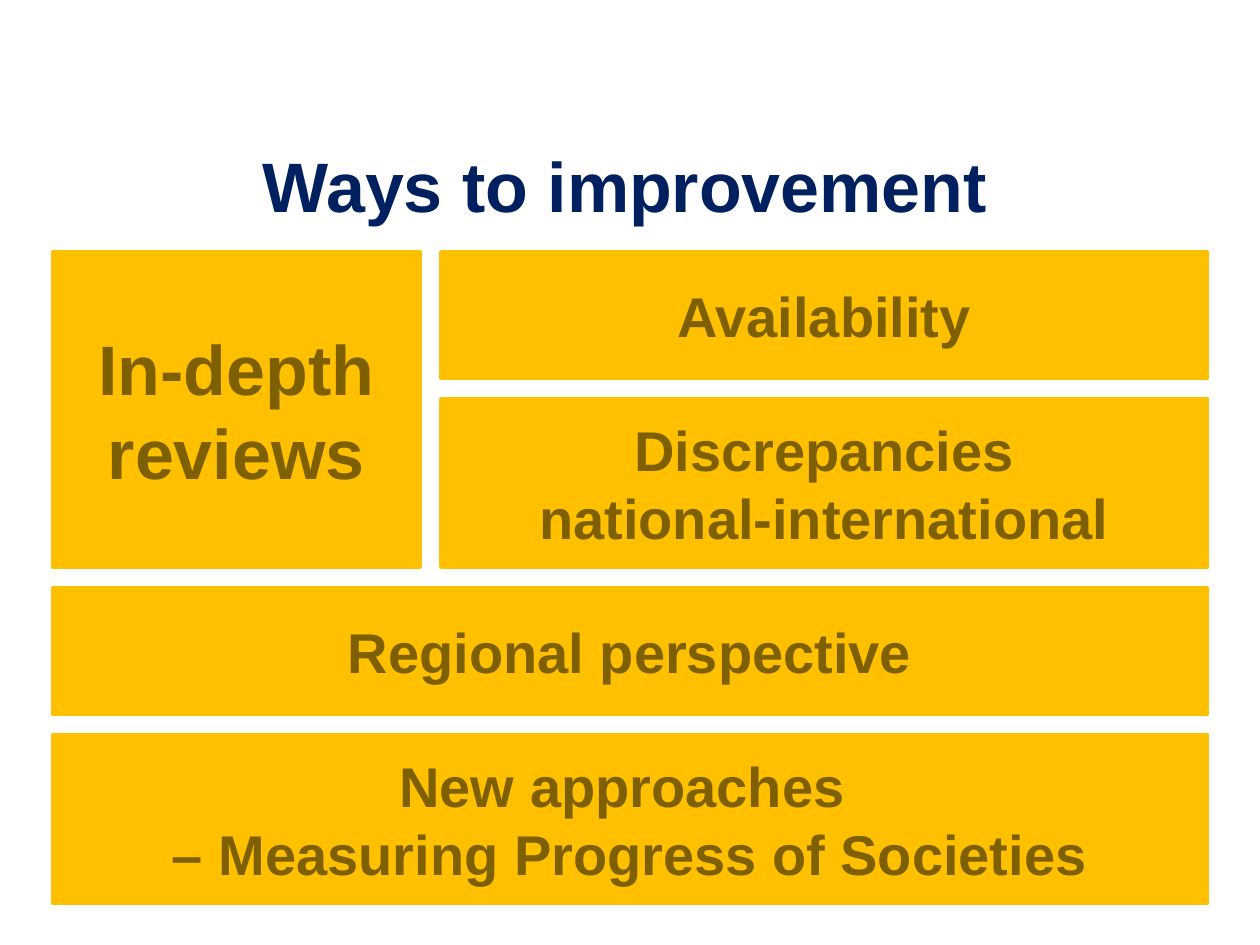
"""Build the slide "Ways to improvement" as a grid of five panels."""
from itertools import accumulate
from typing import NamedTuple

from pptx import Presentation
from pptx.dml.color import RGBColor
from pptx.enum.shapes import MSO_SHAPE as Shape
from pptx.enum.text import MSO_ANCHOR as Anchor, MSO_AUTO_SIZE as AutoSize, PP_ALIGN as Align
from pptx.util import Emu, Pt

PX = 914400 // 120
NAVY = RGBColor(0x00, 0x20, 0x60)
GOLD = RGBColor(0xFF, 0xC0, 0x00)
BROWN = RGBColor(0x7E, 0x60, 0x00)
FONT = "Arial"
LEFT, TOP, WIDTH, GAP = 50, 240, 1100, 20
SIDE_WIDTH = 350
ROW_HEIGHTS = (120, 160, 120, 160)


class Panel(NamedTuple):
    """A filled rectangle with a centred label, in px."""
    lines: tuple[str, ...]
    x: int
    y: int
    w: int
    h: int
    size: int = 32


def px(n: int) -> Emu:
    """Turn px into EMU."""
    return Emu(n * PX)


def place(sp, x: int, y: int, w: int, h: int) -> None:
    """Move and size a shape."""
    sp.left, sp.top, sp.width, sp.height = map(px, (x, y, w, h))


def write(tf, lines: tuple[str, ...], size: int, color: RGBColor) -> None:
    """Write centred bold lines as one paragraph."""
    tf.word_wrap = True
    tf.vertical_anchor = Anchor.MIDDLE
    p = tf.paragraphs[0]
    p.alignment = Align.CENTER
    for i, line in enumerate(lines):
        if i:
            p.add_line_break()
        r = p.add_run()
        r.text = line
        r.font.name, r.font.size, r.font.bold = FONT, Pt(size), True
        r.font.color.rgb = color


def draw_panel(s, panel: Panel) -> None:
    """Draw one panel."""
    sp = s.shapes.add_shape(Shape.RECTANGLE, *map(px, (panel.x, panel.y, panel.w, panel.h)))
    sp.shadow.inherit = False
    sp.fill.solid()
    sp.fill.fore_color.rgb = GOLD
    sp.line.color.rgb = GOLD
    sp.line.width = Pt(2)
    write(sp.text_frame, panel.lines, panel.size, BROWN)


def main() -> None:
    """Build and save the slide."""
    prs = Presentation()
    prs.slide_width, prs.slide_height = px(1200), px(900)
    s = prs.slides.add_slide(prs.slide_layouts[5])

    title = s.shapes.title
    place(title, 120, 130, 950, 92)
    title.text_frame.auto_size = AutoSize.NONE
    write(title.text_frame, ("Ways to improvement",), 40, NAVY)

    h1, h2, h3, h4 = ROW_HEIGHTS
    y1, y2, y3, y4 = accumulate((h + GAP for h in ROW_HEIGHTS[:-1]), initial=TOP)
    main_x = LEFT + SIDE_WIDTH + GAP
    main_w = LEFT + WIDTH - main_x
    panels = (
        Panel(("In-depth reviews",), LEFT, y1, SIDE_WIDTH, y2 + h2 - y1, 40),
        Panel(("Availability",), main_x, y1, main_w, h1),
        Panel(("Discrepancies", "national-international"), main_x, y2, main_w, h2),
        Panel(("Regional perspective",), LEFT, y3, WIDTH, h3),
        Panel(("New approaches ", "– Measuring Progress of Societies"), LEFT, y4, WIDTH, h4),
    )
    for panel in panels:
        draw_panel(s, panel)

    prs.save("out.pptx")


if __name__ == "__main__":
    main()
